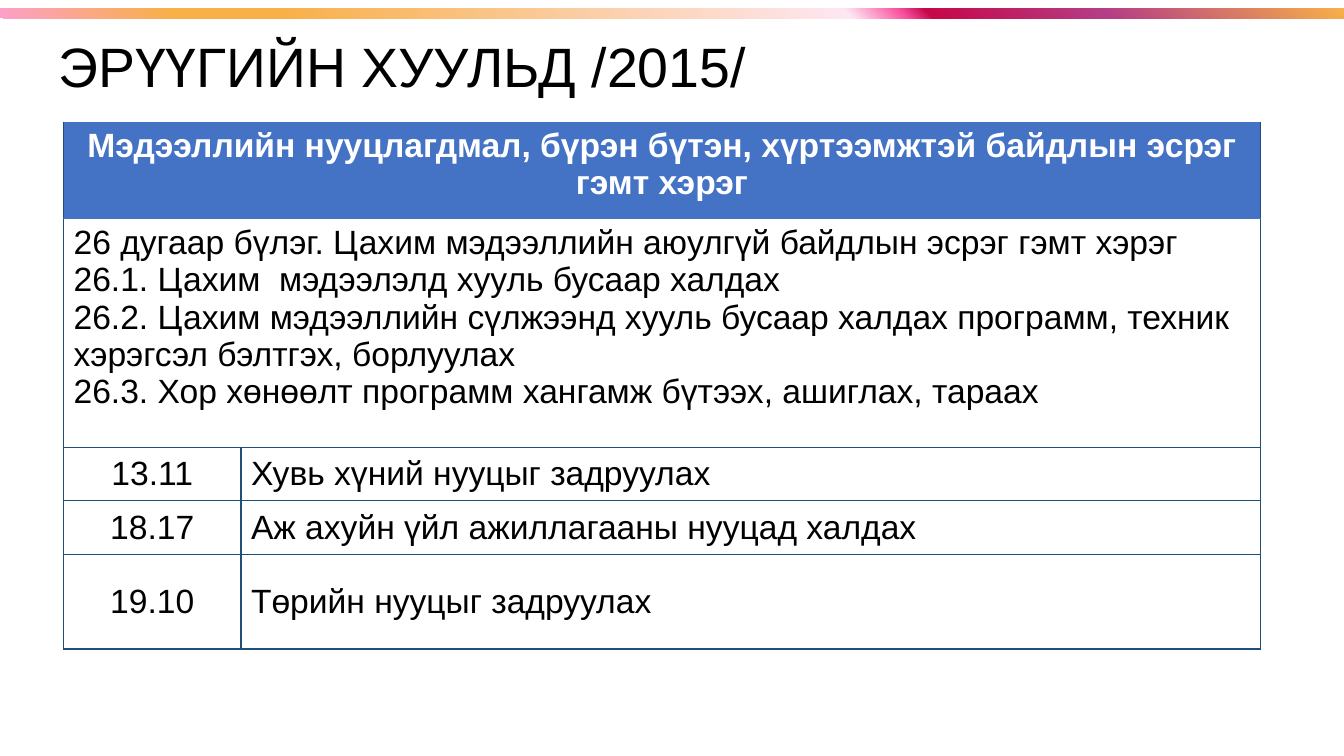
from lxml import etree
from pptx import Presentation
from pptx.dml.color import RGBColor
from pptx.enum.shapes import MSO_SHAPE
from pptx.enum.text import MSO_ANCHOR, PP_ALIGN
from pptx.oxml.ns import qn
from pptx.util import Inches, Pt

RECTANGLE = MSO_SHAPE.RECTANGLE
TOP, MIDDLE = MSO_ANCHOR.TOP, MSO_ANCHOR.MIDDLE
LEFT, CENTER = PP_ALIGN.LEFT, PP_ALIGN.CENTER

BLACK = RGBColor(0x00, 0x00, 0x00)
WHITE = RGBColor(0xFF, 0xFF, 0xFF)
BLUE = RGBColor(0x44, 0x72, 0xC4)
NAVY = RGBColor(0x1F, 0x4E, 0x79)
STRIP_STOPS = [
    (0, RGBColor(0xFC, 0x9F, 0xCB)), (13, RGBColor(0xF8, 0xB0, 0x49)),
    (21, RGBColor(0xF8, 0xB0, 0x49)), (63, RGBColor(0xFE, 0xE7, 0xF2)),
    (67, RGBColor(0xF9, 0x52, 0xA0)), (69, RGBColor(0xC5, 0x08, 0x49)),
    (82, RGBColor(0xB4, 0x3E, 0x85)), (100, RGBColor(0xF8, 0xB0, 0x49)),
]

FONT = "Arial"
COLUMN_WIDTHS = [1.76, 10.11]
ROW_HEIGHTS = [0.96, 2.27, 0.53, 0.53, 0.94]
HEADING = "Мэдээллийн нууцлагдмал, бүрэн бүтэн, хүртээмжтэй байдлын эсрэг гэмт хэрэг"
CHAPTER = [
    "26 дугаар бүлэг. Цахим мэдээллийн аюулгүй байдлын эсрэг гэмт хэрэг",
    "26.1. Цахим  мэдээлэлд хууль бусаар халдах",
    "26.2. Цахим мэдээллийн сүлжээнд хууль бусаар халдах программ, "
    "техник хэрэгсэл бэлтгэх, борлуулах",
    "26.3. Хор хөнөөлт программ хангамж бүтээх, ашиглах, тараах",
]
ARTICLES = [
    ("13.11", "Хувь хүний нууцыг задруулах"),
    ("18.17", "Аж ахуйн үйл ажиллагааны нууцад халдах"),
    ("19.10", "Төрийн нууцыг задруулах"),
]


def write_lines(frame, lines, size=24, color=BLACK, bold=False, align=LEFT, spacing=None):
    for index, line in enumerate(lines):
        para = frame.paragraphs[0] if index == 0 else frame.add_paragraph()
        para.alignment = align
        if spacing:
            para.line_spacing = spacing
        span = para.add_run()
        span.text = line
        span.font.name = FONT
        span.font.size = Pt(size)
        span.font.bold = bold
        span.font.color.rgb = color


def add_solid_color(parent, color):
    fill = etree.SubElement(parent, qn("a:solidFill"))
    etree.SubElement(fill, qn("a:srgbClr"), val=str(color))


def set_borders(cell, top=(NAVY, 1), bottom=(NAVY, 1)):
    """Draw the four edges; top and bottom are (colour, points)."""
    edges = {"lnL": (NAVY, 1), "lnR": (NAVY, 1), "lnT": top, "lnB": bottom}
    properties = cell._tc.get_or_add_tcPr()
    for position, (edge, (color, width)) in enumerate(edges.items()):
        line = etree.Element(qn("a:" + edge), w=str(Pt(width)))
        add_solid_color(line, color)
        properties.insert(position, line)


def fill_cell(cell, lines, fill=WHITE, anchor=MIDDLE, **text_format):
    cell.fill.solid()
    cell.fill.fore_color.rgb = fill
    cell.vertical_anchor = anchor
    write_lines(cell.text_frame, lines, **text_format)


def add_strip(page):
    strip = page.shapes.add_shape(RECTANGLE, 0, Inches(0.08), Inches(13.33), Inches(0.1))
    strip.shadow.inherit = False
    strip.line.fill.background()
    strip.fill.gradient()
    gradient = strip._element.spPr.find(qn("a:gradFill"))
    stops = gradient.find(qn("a:gsLst"))
    for stop in list(stops):
        stops.remove(stop)
    for percent, color in STRIP_STOPS:
        stop = etree.SubElement(stops, qn("a:gs"), pos=str(percent * 1000))
        etree.SubElement(stop, qn("a:srgbClr"), val=str(color))
    gradient.find(qn("a:lin")).set("ang", str(315 * 60000))


def add_title(page, text):
    box = page.shapes.add_textbox(Inches(0.48), Inches(0.34), Inches(11.5), Inches(0.7))
    box.text_frame.word_wrap = True
    box.text_frame.vertical_anchor = MIDDLE
    write_lines(box.text_frame, [text], size=39.6, spacing=0.9)


def add_law_table(page):
    table = page.shapes.add_table(
        len(ROW_HEIGHTS), len(COLUMN_WIDTHS), Inches(0.63), Inches(1.21),
        Inches(sum(COLUMN_WIDTHS)), Inches(sum(ROW_HEIGHTS))).table
    for column, width in zip(table.columns, COLUMN_WIDTHS):
        column.width = Inches(width)
    for row, height in zip(table.rows, ROW_HEIGHTS):
        row.height = Inches(height)

    for row in range(2):
        table.cell(row, 0).merge(table.cell(row, 1))
    fill_cell(table.cell(0, 0), [HEADING], fill=BLUE, anchor=TOP,
              color=WHITE, bold=True, align=CENTER)
    fill_cell(table.cell(1, 0), CHAPTER, anchor=TOP)
    for row, (number, offence) in enumerate(ARTICLES, start=2):
        fill_cell(table.cell(row, 0), [number], align=CENTER)
        fill_cell(table.cell(row, 1), [offence])

    thin_blue = (BLUE, 0.5)
    for column in range(len(COLUMN_WIDTHS)):
        set_borders(table.cell(0, column), top=thin_blue, bottom=thin_blue)
        set_borders(table.cell(1, column), top=thin_blue)
        for row in range(2, len(ROW_HEIGHTS)):
            set_borders(table.cell(row, column))


def main():
    deck = Presentation()
    deck.slide_width, deck.slide_height = Inches(13.33), Inches(7.5)
    page = deck.slides.add_slide(deck.slide_layouts[6])
    add_law_table(page)
    add_strip(page)
    add_title(page, "ЭРҮҮГИЙН ХУУЛЬД /2015/")
    deck.save("out.pptx")


if __name__ == "__main__":
    main()
